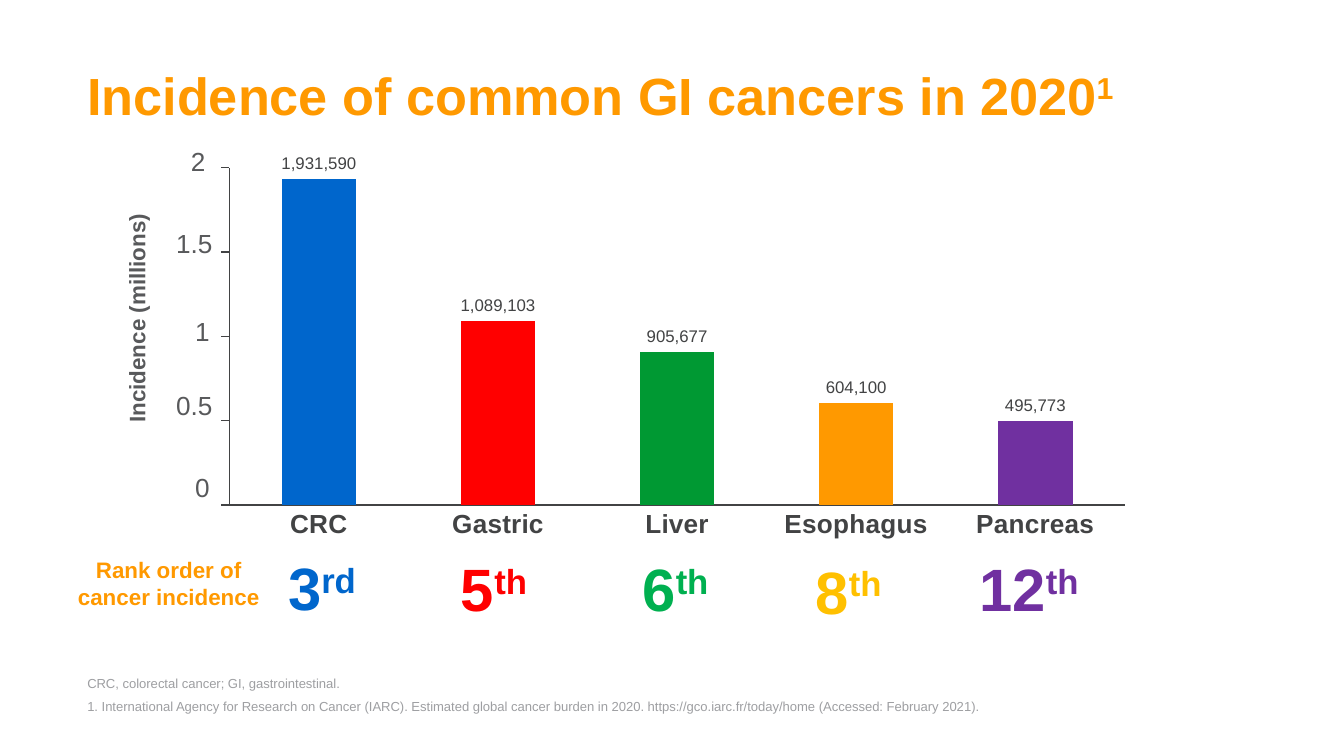
import pptx
import pptx.chart.data
import pptx.dml.color
import pptx.enum.chart
import pptx.enum.text
import pptx.oxml
import pptx.oxml.ns
import pptx.util

Cm, Pt = pptx.util.Cm, pptx.util.Pt
RGBColor = pptx.dml.color.RGBColor
PP_ALIGN = pptx.enum.text.PP_ALIGN
MSO_ANCHOR = pptx.enum.text.MSO_ANCHOR

ORANGE = RGBColor(0xFF, 0x99, 0x00)
BLUE = RGBColor(0x00, 0x66, 0xCC)
RED = RGBColor(0xFF, 0x00, 0x00)
GREEN = RGBColor(0x00, 0x99, 0x33)
LIGHT_GREEN = RGBColor(0x00, 0xB0, 0x50)
GOLD = RGBColor(0xFF, 0xC0, 0x00)
PURPLE = RGBColor(0x70, 0x30, 0xA0)
DARK_GREY = RGBColor(0x42, 0x43, 0x44)
GREY = RGBColor(0x58, 0x59, 0x5B)
LIGHT_GREY = RGBColor(0x9E, 0x9F, 0xA2)

prs = pptx.Presentation()
prs.slide_width, prs.slide_height = Cm(25.4), Cm(14.29)
s = prs.slides.add_slide(prs.slide_layouts[6])


def style_font(font, size, color, bold=False):
    font.name = "Arial"
    font.size = Pt(size)
    font.bold = bold
    font.color.rgb = color


def add_text(box, text, size, color, bold=False, align=PP_ALIGN.LEFT, sup="", inset=0.13):
    """Add a text box at box (left, top, width, height in cm), sup being raised."""
    sp = s.shapes.add_textbox(*[Cm(v) for v in box])
    tf = sp.text_frame
    tf.word_wrap = True
    tf.margin_left = tf.margin_right = tf.margin_top = tf.margin_bottom = Cm(inset)
    p = tf.paragraphs[0]
    p.alignment = align
    style_font(p.font, size, color, bold)
    p.add_run().text = text
    if sup:
        r = p.add_run()
        r.text = sup
        r.font._element.set("baseline", "30000")
    return sp


# Title and footnotes
title = add_text((1.65, 0.76, 21.51, 1.63), "Incidence of common GI cancers in 2020",
                 28, ORANGE, True, sup="1", inset=0)
note = add_text((1.65, 12.22, 21.51, 0.84), "CRC, colorectal cancer; GI, gastrointestinal.",
                7, LIGHT_GREY, inset=0)
for sp in (title, note):
    sp.text_frame.vertical_anchor = MSO_ANCHOR.BOTTOM
    sp.text_frame.paragraphs[0].line_spacing = 0.9
note.text_frame.paragraphs[0].space_before = Pt(6)
note.text_frame.paragraphs[0].space_after = Pt(6)
add_text((1.65, 13.21, 22.15, 1.02),
         "1. International Agency for Research on Cancer (IARC). Estimated global cancer burden "
         "in 2020. https://gco.iarc.fr/today/home (Accessed: February 2021).",
         7, LIGHT_GREY, inset=0)

# Column chart
cancers = [
    ("CRC", 1931590, BLUE),
    ("Gastric", 1089103, RED),
    ("Liver", 905677, GREEN),
    ("Esophagus", 604100, ORANGE),
    ("Pancreas", 495773, PURPLE),
]
data = pptx.chart.data.CategoryChartData()
data.categories = [name for name, value, color in cancers]
data.add_series("Series 1", [value for name, value, color in cancers])
chart = s.shapes.add_chart(pptx.enum.chart.XL_CHART_TYPE.COLUMN_CLUSTERED,
                           Cm(3.84), Cm(2.82), Cm(17.65), Cm(7.59), data).chart
chart.has_legend = False
chart.has_title = False
style_font(chart.font, 10, GREY)

plot = chart.plots[0]
plot.gap_width = 140
plot.overlap = -25
plot.vary_by_categories = False
for i, (name, value, color) in enumerate(cancers):
    fill = plot.series[0].points[i].format.fill
    fill.solid()
    fill.fore_color.rgb = color

plot.has_data_labels = True
labels = plot.data_labels
labels.show_value = True
labels.position = pptx.enum.chart.XL_LABEL_POSITION.OUTSIDE_END
labels.number_format = "#,##0"
labels.number_format_is_linked = False
style_font(labels.font, 9, DARK_GREY)

cat_axis, val_axis = chart.category_axis, chart.value_axis
for axis in (cat_axis, val_axis):
    axis.has_major_gridlines = False
    axis.format.line.color.rgb = DARK_GREY
    axis.format.line.width = Pt(0.75)
cat_axis.major_tick_mark = pptx.enum.chart.XL_TICK_MARK.NONE
style_font(cat_axis.tick_labels.font, 14, DARK_GREY, True)
val_axis.major_tick_mark = pptx.enum.chart.XL_TICK_MARK.OUTSIDE
val_axis.tick_label_position = pptx.enum.chart.XL_TICK_LABEL_POSITION.NONE
val_axis.minimum_scale = 0
val_axis.maximum_scale = 2000000
val_axis.major_unit = 500000

# Fixed inner plot area, as fractions of the chart
qn = pptx.oxml.ns.qn
plot_area = chart._chartSpace.find(".//" + qn("c:plotArea"))
for layout in plot_area.findall(qn("c:layout")):
    plot_area.remove(layout)
plot_area.insert(0, pptx.oxml.parse_xml(
    f'<c:layout {pptx.oxml.ns.nsdecls("c")}><c:manualLayout><c:layoutTarget val="inner"/>'
    '<c:xMode val="edge"/><c:yMode val="edge"/><c:x val="0.028"/><c:y val="0.046"/>'
    '<c:w val="0.959"/><c:h val="0.84"/></c:manualLayout></c:layout>'))

# Value axis title and labels
axis_title = add_text((0.66, 5.38, 4.34, 1.27), "Incidence (millions)",
                      12, GREY, True, PP_ALIGN.CENTER)
axis_title.rotation = 270
for label, left, top, width in [
    ("2", 3.48, 2.62, 0.71),
    ("1.5", 3.2, 4.17, 1.12),
    ("1", 3.56, 5.84, 1.12),
    ("0.5", 3.2, 7.24, 1.12),
    ("0", 3.56, 8.79, 0.76),
]:
    add_text((left, top, width, 0.76), label, 14, GREY)

# Rank order below the columns
add_text((1.12, 10.39, 4.14, 1.27), "Rank order of cancer incidence",
         12, ORANGE, True, PP_ALIGN.CENTER)
for rank, suffix, left, top, color in [
    ("3", "rd", 4.93, 10.29, BLUE),
    ("5", "th", 8.18, 10.31, RED),
    ("6", "th", 11.61, 10.31, LIGHT_GREEN),
    ("8", "th", 14.88, 10.36, GOLD),
    ("12", "th", 18.29, 10.31, PURPLE),
]:
    add_text((left, top, 2.31, 1.63), rank, 32, color, True, PP_ALIGN.CENTER, sup=suffix)

prs.save("out.pptx")
